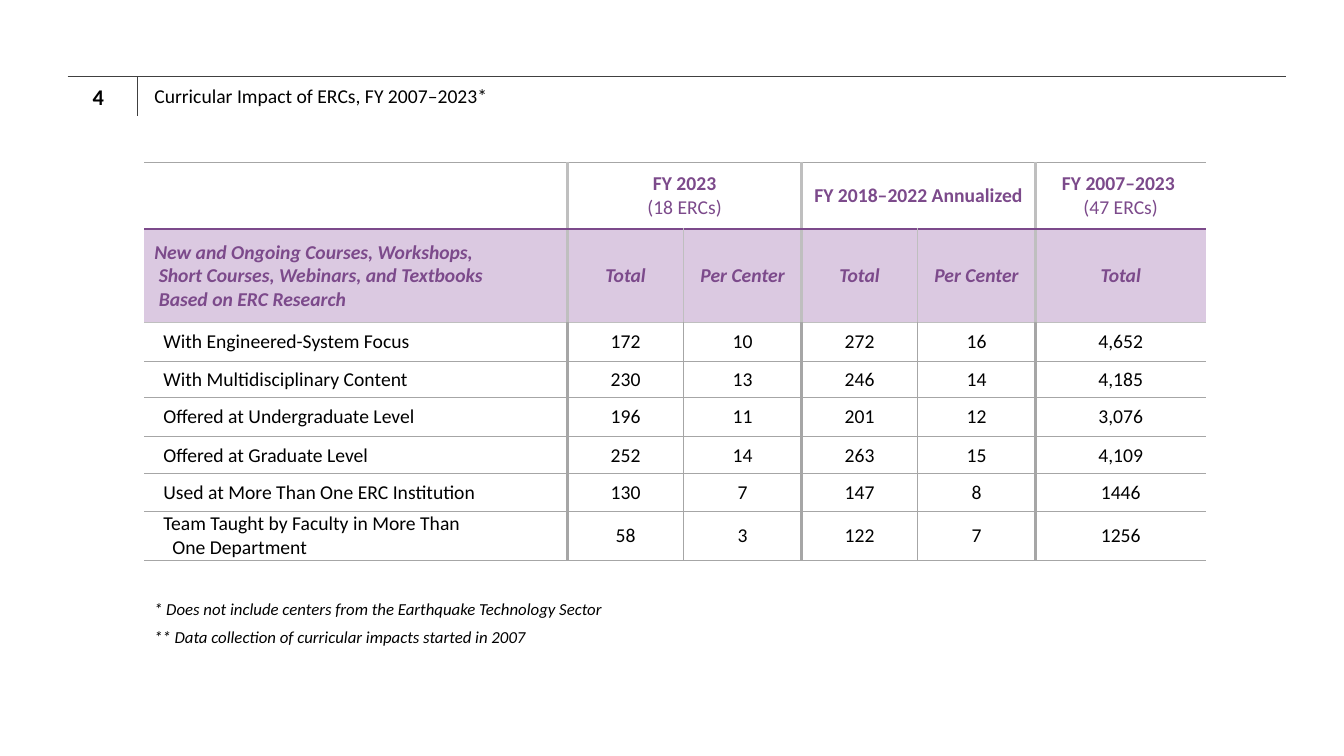
from lxml import etree
from pptx import Presentation
from pptx.dml.color import RGBColor
from pptx.enum.shapes import MSO_CONNECTOR
from pptx.enum.text import MSO_ANCHOR, MSO_AUTO_SIZE, PP_ALIGN
from pptx.oxml.ns import qn
from pptx.util import Inches, Pt

LEFT, CENTER = PP_ALIGN.LEFT, PP_ALIGN.CENTER
MIDDLE, TOP = MSO_ANCHOR.MIDDLE, MSO_ANCHOR.TOP
STRAIGHT = MSO_CONNECTOR.STRAIGHT
NO_AUTOFIT = MSO_AUTO_SIZE.NONE

COLORS = {
    "text": "000000",
    "rule": "404040",
    "purple": "7C4A8B",
    "lilac": "DBC9E1",
    "border": "A6A6A6",
    "header_border": "BFBFBF",
}
FONT = "Calibri"
NO_STYLE = "{2D5ABB26-0587-4C30-8999-92F81FD0307C}"
SLIDE_WIDTH, SLIDE_HEIGHT = Inches(13.33), Inches(7.5)

# Shares of the slide's width and height, in percent.
CONTENT_LEFT = 10.73
TABLE_TOP = 21.47
COLUMN_WIDTHS = [31.51, 8.63, 8.78, 8.63, 8.78, 12.68]
ROW_HEIGHTS = [8.8, 12.4, 5.07, 4.8, 5.2, 4.93, 4.93, 6.53]
GROUP_EDGES = {1, 3, 5}

PERIODS = [
    (1, 2, "FY 2023\n", "(18 ERCs)"),
    (3, 4, "FY 2018–2022 Annualized", ""),
    (5, 5, "FY 2007–2023 \n", "(47 ERCs)"),
]
MEASURES = [
    "New and Ongoing Courses, Workshops, \nShort Courses, Webinars, and Textbooks \n"
    "Based on ERC Research",
    "Total", "Per Center", "Total", "Per Center", "Total",
]
IMPACTS = [
    ("With Engineered-System Focus", "172", "10", "272", "16", "4,652"),
    ("With Multidisciplinary Content", "230", "13", "246", "14", "4,185"),
    ("Offered at Undergraduate Level", "196", "11", "201", "12", "3,076"),
    ("Offered at Graduate Level", "252", "14", "263", "15", "4,109"),
    ("Used at More Than One ERC Institution", "130", "7", "147", "8", "1446"),
    ("Team Taught by Faculty in More Than\nOne Department", "58", "3", "122", "7", "1256"),
]
NOTES = [
    "* Does not include centers from the Earthquake Technology Sector",
    "** Data collection of curricular impacts started in 2007",
]


def across(percent):
    return round(SLIDE_WIDTH * percent / 100)


def down(percent):
    return round(SLIDE_HEIGHT * percent / 100)


def write_text(paragraph, text, size=14, color="text", bold=False, italic=False,
               align=LEFT, hanging=0):
    """Add formatted text; a newline is a line break, hanging indents later lines."""
    paragraph.alignment = align
    if hanging:
        properties = paragraph._p.get_or_add_pPr()
        properties.set("marL", str(Pt(hanging)))
        properties.set("indent", str(-Pt(hanging)))
    for index, line in enumerate(text.split("\n")):
        if index:
            paragraph.add_line_break()
        if line:
            run = paragraph.add_run()
            run.text = line
            run.font.name = FONT
            run.font.size = Pt(size)
            run.font.bold = bold
            run.font.italic = italic
            run.font.color.rgb = RGBColor.from_string(COLORS[color])


def add_rule(slide, left, top, right, bottom):
    rule = slide.shapes.add_connector(
        STRAIGHT, across(left), down(top), across(right), down(bottom))
    rule.line.color.rgb = RGBColor.from_string(COLORS["rule"])
    rule.line.width = Pt(0.25)
    etree.SubElement(rule._element.spPr, qn("a:effectLst"))


def add_title(slide, text):
    title = slide.shapes.title
    title.left, title.top = across(CONTENT_LEFT), down(10.93)
    title.width, title.height = across(82.5), down(3.47)
    frame = title.text_frame
    frame.auto_size = NO_AUTOFIT
    frame.vertical_anchor = MIDDLE
    frame.margin_top = frame.margin_bottom = 0
    write_text(frame.paragraphs[0], text)


def add_text_box(slide, left, top, width, height, lines, anchor=TOP, space_before=0, **text_format):
    box = slide.shapes.add_textbox(across(left), down(top), across(width), down(height))
    frame = box.text_frame
    frame.word_wrap = True
    frame.vertical_anchor = anchor
    for index, line in enumerate(lines):
        paragraph = frame.add_paragraph() if index else frame.paragraphs[0]
        paragraph.space_before = Pt(space_before)
        write_text(paragraph, line, **text_format)


def set_border(cell, side, width, color):
    line = etree.SubElement(cell._tc.get_or_add_tcPr(), qn(f"a:ln{side}"), w=str(Pt(width)))
    if width:
        fill = etree.SubElement(line, qn("a:solidFill"))
        etree.SubElement(fill, qn("a:srgbClr"), val=COLORS[color])
    else:
        etree.SubElement(line, qn("a:noFill"))


def vertical_weight(edge):
    if edge in (0, len(COLUMN_WIDTHS)):
        return 0
    return 2 if edge in GROUP_EDGES else 0.5


def horizontal_border(edge):
    if edge == 1:
        return 1.5, "purple"
    return 0.5, "header_border" if edge == 2 else "border"


def format_cell(cell, row, column):
    color = "header_border" if row < 2 else "border"
    left = 0 if cell.is_spanned else vertical_weight(column)
    right_edge = column + (cell.span_width if cell.is_merge_origin else 1)
    set_border(cell, "L", left, color)
    set_border(cell, "R", vertical_weight(right_edge), color)
    set_border(cell, "T", *horizontal_border(row))
    set_border(cell, "B", *horizontal_border(row + 1))
    if row == 1:
        cell.fill.solid()
        cell.fill.fore_color.rgb = RGBColor.from_string(COLORS["lilac"])
    else:
        cell.fill.background()
    label_margin = 0.1 if row == 1 else 0.19
    cell.margin_left = Inches(0.01 if column else label_margin)
    cell.margin_top = cell.margin_right = Inches(0.01)
    cell.margin_bottom = 0
    cell.vertical_anchor = MIDDLE


def add_impact_table(slide):
    frame = slide.shapes.add_table(
        len(ROW_HEIGHTS), len(COLUMN_WIDTHS), across(CONTENT_LEFT), down(TABLE_TOP),
        across(sum(COLUMN_WIDTHS)), down(sum(ROW_HEIGHTS)))
    table = frame.table
    table.first_row = table.horz_banding = False
    table._tbl.tblPr.find(qn("a:tableStyleId")).text = NO_STYLE
    for column, width in zip(table.columns, COLUMN_WIDTHS):
        column.width = across(width)
    for row, height in zip(table.rows, ROW_HEIGHTS):
        row.height = down(height)

    for first, last, period, centers in PERIODS:
        if last > first:
            table.cell(0, first).merge(table.cell(0, last))
        paragraph = table.cell(0, first).text_frame.paragraphs[0]
        write_text(paragraph, period, color="purple", bold=True, align=CENTER)
        write_text(paragraph, centers, color="purple", align=CENTER)

    header_format = {"color": "purple", "bold": True, "italic": True, "hanging": 3.2}
    for row, texts in enumerate([MEASURES, *IMPACTS], start=1):
        for column, text in enumerate(texts):
            text_format = dict(header_format) if row == 1 else {"hanging": 6.4}
            if column:
                text_format.update(align=CENTER, hanging=0)
            write_text(table.cell(row, column).text_frame.paragraphs[0], text, **text_format)

    for row in range(len(ROW_HEIGHTS)):
        for column in range(len(COLUMN_WIDTHS)):
            format_cell(table.cell(row, column), row, column)


def main():
    presentation = Presentation()
    presentation.slide_width, presentation.slide_height = SLIDE_WIDTH, SLIDE_HEIGHT
    slide = presentation.slides.add_slide(presentation.slide_layouts.get_by_name("Title Only"))
    add_rule(slide, 5.03, 10.13, 95.72, 10.13)
    add_rule(slide, 10.2, 10.2, 10.2, 15.33)
    add_title(slide, "Curricular Impact of ERCs, FY 2007–2023*")
    add_text_box(slide, 4.5, 10, 5.63, 5.47, ["4"], anchor=MIDDLE,
                 size=16, bold=True, align=CENTER)
    add_text_box(slide, CONTENT_LEFT, 78.53, 53.79, 7.6, NOTES, space_before=6,
                 size=12, italic=True)
    add_impact_table(slide)
    presentation.save("out.pptx")


if __name__ == "__main__":
    main()
